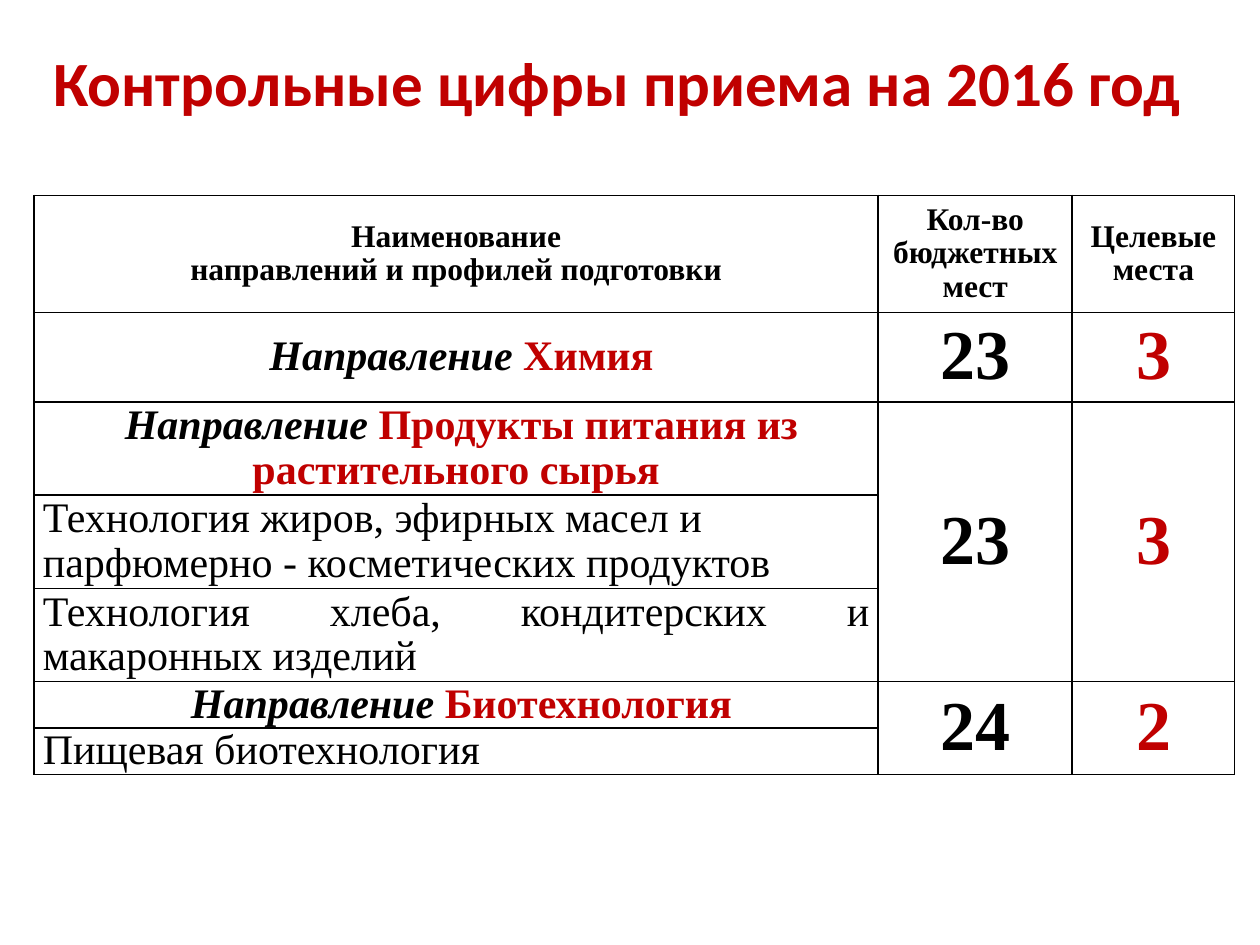
from dataclasses import dataclass

from lxml.etree import SubElement
from pptx import Presentation
from pptx.dml.color import RGBColor
from pptx.enum.text import MSO_ANCHOR, PP_ALIGN
from pptx.oxml.ns import qn
from pptx.table import _Cell
from pptx.util import Inches, Pt

COLORS = {"black": "000000", "red": "C00000"}
TABLE_FONT = "Times New Roman"
COLUMN_WIDTHS = [6.7, 1.54, 1.29]
ROW_HEIGHTS = [0.93, 0.71, 0.74, 0.74, 0.74, 0.37, 0.37]


@dataclass
class Span:
    text: str
    color: str = "black"
    italic: bool = False


@dataclass
class Entry:
    row: int
    column: int
    paragraphs: list[list[Span]]
    size: int = 24
    bold: bool = True
    align: PP_ALIGN = PP_ALIGN.CENTER
    rows: int = 1


def direction(row: int, name: str) -> Entry:
    return Entry(row, 0, [[Span(" "), Span("Направление ", italic=True), Span(name, "red")]])


def profile(row: int, name: str, align: PP_ALIGN = PP_ALIGN.JUSTIFY) -> Entry:
    return Entry(row, 0, [[Span(name)]], bold=False, align=align)


def header(column: int, *lines: str) -> Entry:
    return Entry(0, column, [[Span(line)] for line in lines], size=18)


def places(row: int, budget: str, target: str, rows: int = 1) -> list[Entry]:
    return [
        Entry(row, 1, [[Span(budget)]], size=40, rows=rows),
        Entry(row, 2, [[Span(target, "red")]], size=40, rows=rows),
    ]


def style_cell(cell: _Cell) -> None:
    """Give a cell thin black borders and no fill."""
    properties = cell._tc.get_or_add_tcPr()
    for side in ("lnL", "lnR", "lnT", "lnB"):
        line = SubElement(properties, qn(f"a:{side}"), w=str(Pt(1)))
        fill = SubElement(line, qn("a:solidFill"))
        SubElement(fill, qn("a:srgbClr"), val=COLORS["black"])
    cell.fill.background()


def write_entry(table, entry: Entry) -> None:
    cell = table.cell(entry.row, entry.column)
    if entry.rows > 1:
        cell.merge(table.cell(entry.row + entry.rows - 1, entry.column))
    cell.vertical_anchor = MSO_ANCHOR.MIDDLE
    if entry.column == 0:
        cell.margin_left = cell.margin_right = Inches(0.07)
        cell.margin_top = cell.margin_bottom = 0
    frame = cell.text_frame
    for index, spans in enumerate(entry.paragraphs):
        para = frame.add_paragraph() if index else frame.paragraphs[0]
        para.alignment = entry.align
        para.line_spacing = 0.96
        para.font.size = Pt(entry.size)
        for span in spans:
            run = para.add_run()
            run.text = span.text
            run.font.name = TABLE_FONT
            run.font.size = Pt(entry.size)
            run.font.bold = entry.bold
            run.font.italic = span.italic
            run.font.color.rgb = RGBColor.from_string(COLORS[span.color])


ENTRIES = [
    header(0, "Наименование", "направлений и профилей подготовки"),
    header(1, "Кол-во бюджетных мест"),
    header(2, "Целевые места"),
    direction(1, "Химия"),
    *places(1, "23", "3"),
    direction(2, "Продукты питания из растительного сырья"),
    *places(2, "23", "3", rows=3),
    profile(3, "Технология жиров, эфирных масел и парфюмерно - косметических продуктов",
            PP_ALIGN.LEFT),
    profile(4, "Технология хлеба, кондитерских и макаронных изделий"),
    direction(5, "Биотехнология"),
    *places(5, "24", "2", rows=2),
    profile(6, "Пищевая биотехнология"),
]


def main() -> None:
    deck = Presentation()
    deck.slide_width, deck.slide_height = Inches(10), Inches(7.5)
    page = deck.slides.add_slide(deck.slide_layouts[5])

    # Title
    title = page.shapes.title
    title.left, title.top = Inches(0), Inches(0.21)
    title.width, title.height = Inches(9.8), Inches(0.87)
    title.text_frame.text = "Контрольные цифры приема на 2016 год"
    para = title.text_frame.paragraphs[0]
    para.alignment = PP_ALIGN.CENTER
    para.font.name = "Calibri"
    para.font.size = Pt(36)
    para.font.bold = True
    para.font.color.rgb = RGBColor.from_string(COLORS["red"])

    # Admission table
    table = page.shapes.add_table(
        len(ROW_HEIGHTS), len(COLUMN_WIDTHS), Inches(0.27), Inches(1.55),
        Inches(sum(COLUMN_WIDTHS)), Inches(sum(ROW_HEIGHTS)),
    ).table
    table.first_row = table.horz_banding = False
    for column, width in zip(table.columns, COLUMN_WIDTHS):
        column.width = Inches(width)
    for row, height in zip(table.rows, ROW_HEIGHTS):
        row.height = Inches(height)
    for cell in table.iter_cells():
        style_cell(cell)
    for entry in ENTRIES:
        write_entry(table, entry)

    deck.save("out.pptx")


if __name__ == "__main__":
    main()
